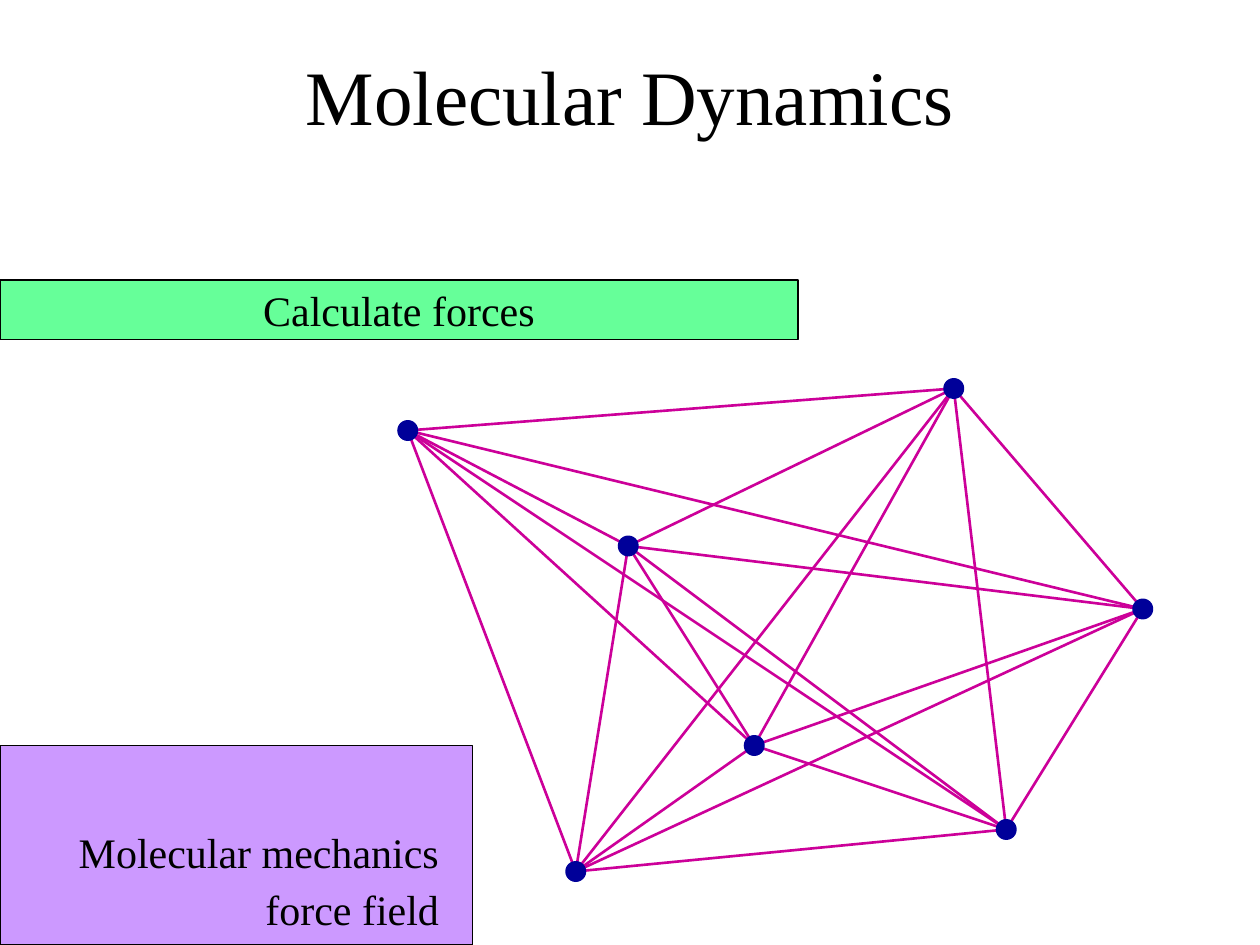
from dataclasses import dataclass
from itertools import combinations

from lxml.etree import SubElement
from pptx import Presentation
from pptx.dml.color import RGBColor
from pptx.enum.shapes import MSO_CONNECTOR, MSO_SHAPE
from pptx.enum.text import MSO_ANCHOR, MSO_AUTO_SIZE, PP_ALIGN
from pptx.oxml.ns import qn
from pptx.util import Pt


@dataclass(frozen=True)
class Theme:
    font: str = "Times New Roman"
    title_size: int = 44
    label_size: int = 24
    ink: RGBColor = RGBColor.from_string("000000")
    force: RGBColor = RGBColor.from_string("CC0099")
    atom: RGBColor = RGBColor.from_string("000099")
    step: RGBColor = RGBColor.from_string("66FF99")
    method: RGBColor = RGBColor.from_string("CC99FF")
    force_width: float = 1.5
    border_width: float = 0.75


THEME = Theme()
ATOM_SIZE = 12
ATOM_CENTRES = [(545, 222), (233, 246), (359, 312), (431, 426),
                (329, 498), (575, 474), (653, 348)]


def write_text(frame, lines, size, alignment, anchor, space_between=0):
    frame.word_wrap = True
    frame.auto_size = MSO_AUTO_SIZE.NONE
    frame.vertical_anchor = anchor
    for index, line in enumerate(lines):
        paragraph = frame.add_paragraph() if index else frame.paragraphs[0]
        paragraph.text = line
        paragraph.alignment = alignment
        paragraph.space_before = Pt(space_between if index else 0)
        paragraph.font.name = THEME.font
        paragraph.font.size = Pt(size)
        paragraph.font.color.rgb = THEME.ink


def set_title(page, text):
    title = page.shapes.title
    title.left, title.top, title.width, title.height = Pt(0), Pt(30), Pt(720), Pt(48)
    write_text(title.text_frame, [text], THEME.title_size,
               PP_ALIGN.CENTER, MSO_ANCHOR.MIDDLE)


def add_filled_shape(shapes, kind, left, top, width, height, fill, bordered):
    shape = shapes.add_shape(kind, Pt(left), Pt(top), Pt(width), Pt(height))
    shape.shadow.inherit = False
    shape.fill.solid()
    shape.fill.fore_color.rgb = fill
    if bordered:
        shape.line.color.rgb = THEME.ink
        shape.line.width = Pt(THEME.border_width)
    else:
        shape.line.fill.background()
    return shape


def add_force(shapes, start, end):
    line = shapes.add_connector(MSO_CONNECTOR.STRAIGHT,
                                *(Pt(value) for value in start + end))
    line.line.color.rgb = THEME.force
    line.line.width = Pt(THEME.force_width)
    SubElement(line._element.spPr, qn("a:effectLst"))


def add_forces(page):
    """Join every pair of atoms with a line."""
    group = page.shapes.add_group_shape()
    for start, end in combinations(ATOM_CENTRES, 2):
        add_force(group.shapes, start, end)


def add_atoms(page):
    group = page.shapes.add_group_shape()
    for x, y in ATOM_CENTRES:
        add_filled_shape(group.shapes, MSO_SHAPE.OVAL, x - ATOM_SIZE / 2,
                         y - ATOM_SIZE / 2, ATOM_SIZE, ATOM_SIZE,
                         THEME.atom, bordered=False)


def add_step(page, text):
    box = add_filled_shape(page.shapes, MSO_SHAPE.RECTANGLE, 0, 160, 456, 34,
                           THEME.step, bordered=True)
    write_text(box.text_frame, [text], THEME.label_size,
               PP_ALIGN.CENTER, MSO_ANCHOR.MIDDLE)


def add_method(page, lines):
    group = page.shapes.add_group_shape()
    add_filled_shape(group.shapes, MSO_SHAPE.RECTANGLE, 0, 426, 270, 114,
                     THEME.method, bordered=True)
    box = group.shapes.add_textbox(Pt(-30), Pt(468.5), Pt(288), Pt(62))
    write_text(box.text_frame, lines, THEME.label_size,
               PP_ALIGN.RIGHT, MSO_ANCHOR.TOP, space_between=4)


def main():
    deck = Presentation()
    deck.slide_width, deck.slide_height = Pt(720), Pt(540)
    page = deck.slides.add_slide(deck.slide_layouts.get_by_name("Title Only"))
    set_title(page, "Molecular Dynamics")
    add_forces(page)
    add_step(page, "Calculate forces")
    add_atoms(page)
    add_method(page, ["Molecular mechanics", "force field"])
    deck.save("out.pptx")


if __name__ == "__main__":
    main()
